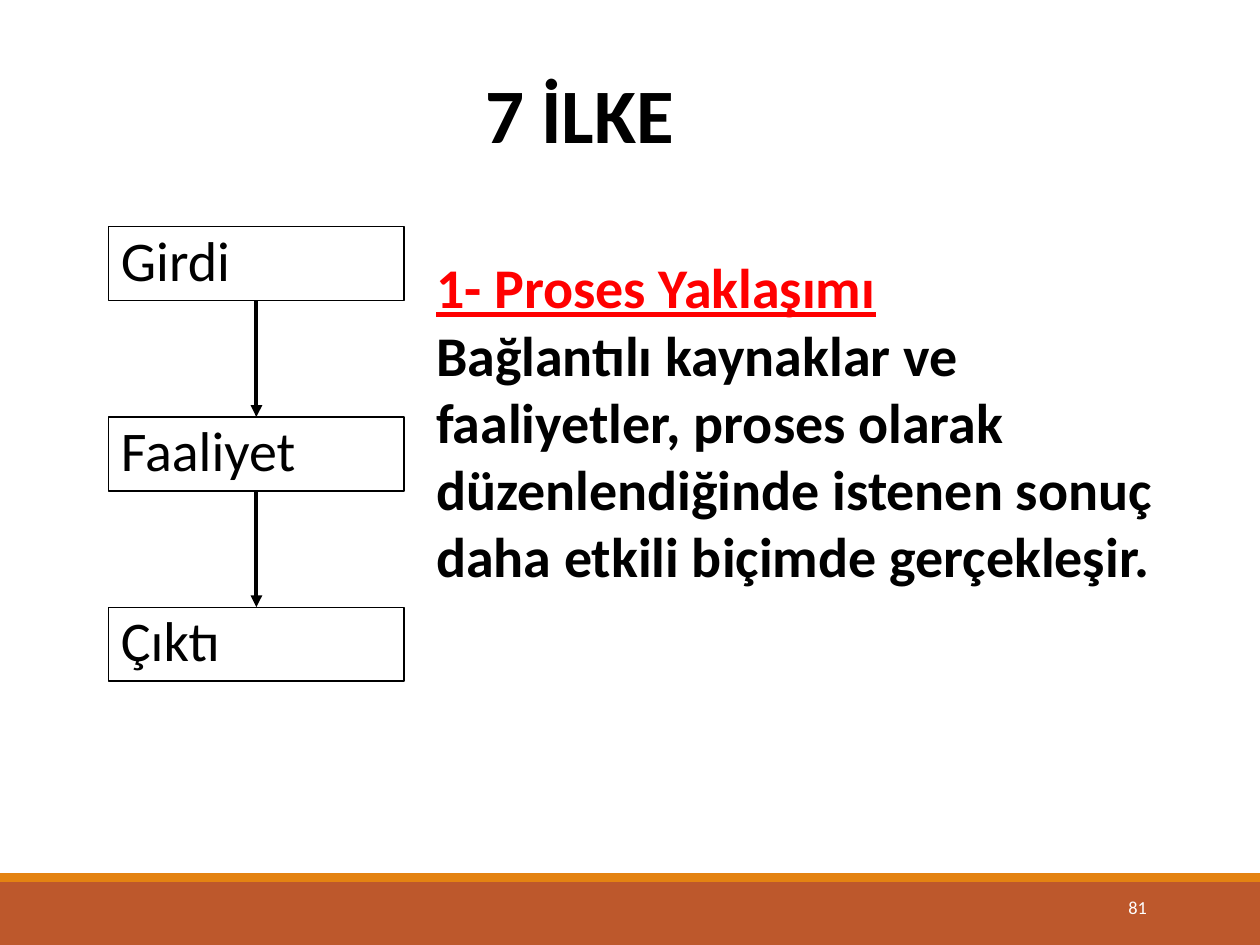
from dataclasses import dataclass
from pptx import Presentation
from pptx.dml.color import RGBColor as Rgb
from pptx.enum.shapes import MSO_CONNECTOR as Link, MSO_SHAPE as Kind
from pptx.enum.text import MSO_ANCHOR as Anchor, MSO_AUTO_SIZE as Fit, PP_ALIGN as Align
from pptx.oxml.ns import qn
from pptx.util import Pt
from lxml.etree import SubElement as Sub


@dataclass(frozen=True)
class Theme:
    font: str = "Calibri"
    ink: str = "000000"
    red: str = "FF0000"
    white: str = "FFFFFF"
    rust: str = "BD582C"
    amber: str = "E48312"
    head: float = 44
    main: float = 32
    small: float = 10.5


def write(para, text, *, font, size, color, bold=False, under=False,
          align=Align.LEFT, lead=1.0):
    props = para._p.get_or_add_pPr()
    props.set("marL", "0")
    props.set("indent", "0")
    Sub(props, qn("a:buNone"))
    para.alignment = align
    para.line_spacing = lead
    para.space_before = Pt(0)
    run = para.add_run()
    run.text = text
    face = run.font
    face.name, face.size = font, Pt(size)
    face.bold, face.underline = bold, under
    face.color.rgb = Rgb.from_string(color)


class Deck:
    def __init__(self, slide, theme):
        self.slide = slide
        self.theme = theme

    def place(self, shape, area):
        shape.left, shape.top, shape.width, shape.height = map(Pt, area)

    def frame(self, shape, anchor=Anchor.TOP, wrap=True, top=3.6):
        frame = shape.text_frame
        frame.auto_size = Fit.NONE
        frame.word_wrap = wrap
        frame.vertical_anchor = anchor
        frame.margin_left = frame.margin_right = Pt(7.2)
        frame.margin_top, frame.margin_bottom = Pt(top), Pt(3.6)
        return frame

    def title(self, text, area):
        look = self.theme
        shape = self.slide.shapes.title
        self.place(shape, area)
        frame = self.frame(shape, Anchor.MIDDLE, wrap=False)
        write(frame.paragraphs[0], text, font=look.font, size=look.head,
              color=look.ink, bold=True)

    def body(self, head, text, area):
        look = self.theme
        shape = self.slide.placeholders[1]
        self.place(shape, area)
        frame = self.frame(shape, top=43)
        style = dict(font=look.font, size=look.main, bold=True)
        write(frame.paragraphs[0], head, color=look.red, under=True, **style)
        write(frame.add_paragraph(), text, color=look.ink, **style)

    def rect(self, area, fill=None, line=None):
        shape = self.slide.shapes.add_shape(Kind.RECTANGLE, *map(Pt, area))
        shape.shadow.inherit = False
        if fill:
            shape.fill.solid()
            shape.fill.fore_color.rgb = Rgb.from_string(fill)
        else:
            shape.fill.background()
        if line:
            shape.line.color.rgb = Rgb.from_string(line)
            shape.line.width = Pt(0.75)
        else:
            shape.line.fill.background()
        return shape

    def box(self, text, area):
        look = self.theme
        shape = self.rect(area, line=look.ink)
        write(self.frame(shape).paragraphs[0], text, font=look.font,
              size=look.main, color=look.ink, lead=0.9)

    def arrow(self, x, top, end):
        link = self.slide.shapes.add_connector(
            Link.STRAIGHT, Pt(x), Pt(top), Pt(x), Pt(end))
        link.line.color.rgb = Rgb.from_string(self.theme.ink)
        link.line.width = Pt(2.25)
        Sub(link.line._get_or_add_ln(), qn("a:tailEnd"), type="triangle")
        Sub(link._element.spPr, qn("a:effectLst"))

    def number(self, text, area):
        look = self.theme
        shape = self.slide.shapes.add_textbox(*map(Pt, area))
        write(self.frame(shape).paragraphs[0], text, font=look.font,
              size=look.small, color=look.white, align=Align.RIGHT)


def main():
    show = Presentation()
    show.slide_width, show.slide_height = Pt(720), Pt(540)
    theme = Theme()
    deck = Deck(show.slides.add_slide(show.slide_layouts[1]), theme)

    deck.rect((0, 504, 720, 36), fill=theme.rust)
    deck.rect((0, 499, 720, 5), fill=theme.amber)
    deck.title("7 İLKE", (270, 34, 124, 60.5))
    deck.body("1- Proses Yaklaşımı",
              "Bağlantılı kaynaklar ve faaliyetler, proses olarak düzenlendiğinde "
              "istenen sonuç daha etkili biçimde gerçekleşir.",
              (242, 101.5, 444, 317.5))

    left, top, wide, high, pitch = 62, 129.6, 169, 42.3, 108.7
    steps = ["Girdi", "Faaliyet", "Çıktı"]
    for row, step in enumerate(steps):
        y = top + row * pitch
        deck.box(step, (left, y, wide, high))
        if row:
            deck.arrow(left + wide / 2, y - pitch + high, y)

    deck.number("81", (584.6, 508.5, 77.8, 28.8))
    show.save("out.pptx")


if __name__ == "__main__":
    main()
